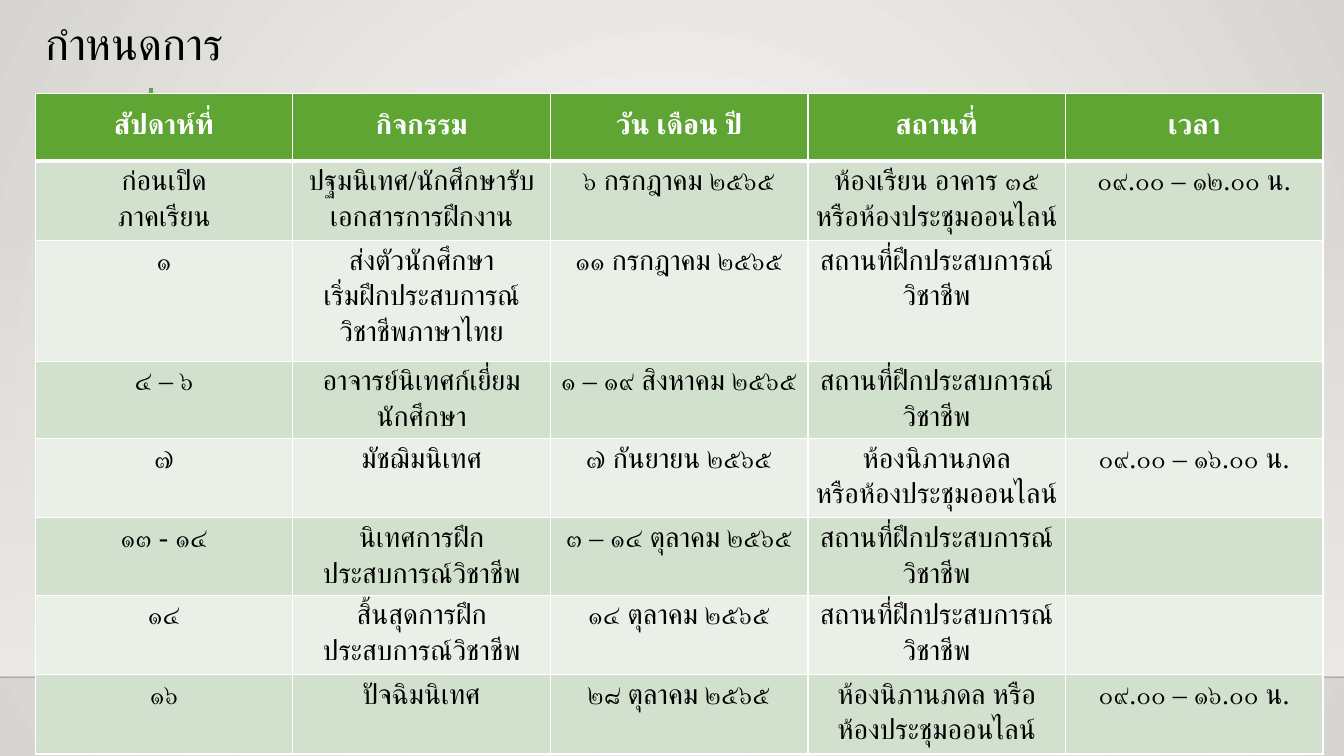
"""Build the internship schedule slide with a Thai timetable."""
from dataclasses import dataclass

import pptx
import pptx.dml.color
import pptx.enum.dml
import pptx.enum.lang
import pptx.enum.shapes
import pptx.enum.text
import pptx.oxml.ns
import pptx.util
from lxml import etree
from pptx.dml.color import RGBColor
from pptx.util import Cm

BLACK = RGBColor(0x00, 0x00, 0x00)
WHITE = RGBColor(0xFF, 0xFF, 0xFF)
GREEN = RGBColor(0x5F, 0xA5, 0x34)
LIGHT_GREEN = RGBColor(0xD2, 0xE1, 0xCE)
PALE_GREEN = RGBColor(0xEA, 0xF0, 0xE8)
BACKDROP_CENTER = RGBColor(0xFA, 0xFA, 0xF9)
BACKDROP_EDGE = RGBColor(0xD7, 0xD5, 0xD2)
WALL = RGBColor(0xED, 0xEB, 0xE7)
FLOOR_LINE = RGBColor(0x00, 0x00, 0x01)

SLIDE_WIDTH = Cm(33.87)
SLIDE_HEIGHT = Cm(19.05)
COLUMN_WIDTH = Cm(6.49)
SHORT, MEDIUM, TALL = Cm(1.7), Cm(2), Cm(3.04)
WORKPLACE = "สถานที่ฝึกประสบการณ์วิชาชีพ"
AFTERNOON_END = "๐๙.๐๐ – ๑๖.๐๐ น."


@dataclass(frozen=True)
class ScheduleRow:
    height: int
    texts: tuple[str, ...]


@dataclass(frozen=True)
class Rule:
    start: tuple[int, int]
    end: tuple[int, int]
    color: RGBColor
    width: float
    opacity: int = 100


SCHEDULE = (
    ScheduleRow(SHORT, ("สัปดาห์ที่", "กิจกรรม", "วัน เดือน ปี", "สถานที่", "เวลา")),
    ScheduleRow(MEDIUM, ("ก่อนเปิด\nภาคเรียน", "ปฐมนิเทศ/นักศึกษารับเอกสารการฝึกงาน",
                         "๖ กรกฎาคม ๒๕๖๕", "ห้องเรียน อาคาร ๓๕ หรือห้องประชุมออนไลน์",
                         "๐๙.๐๐ – ๑๒.๐๐ น.")),
    ScheduleRow(TALL, ("๑", "ส่งตัวนักศึกษา\nเริ่มฝึกประสบการณ์วิชาชีพภาษาไทย",
                       "๑๑ กรกฎาคม ๒๕๖๕", WORKPLACE, "")),
    ScheduleRow(SHORT, ("๔ – ๖", "อาจารย์นิเทศก์เยี่ยมนักศึกษา",
                        "๑ – ๑๙ สิงหาคม ๒๕๖๕", WORKPLACE, "")),
    ScheduleRow(MEDIUM, ("๗", "มัชฌิมนิเทศ", "๗ กันยายน ๒๕๖๕",
                         "ห้องนิภานภดล\nหรือห้องประชุมออนไลน์", AFTERNOON_END)),
    ScheduleRow(SHORT, ("๑๓ - ๑๔", "นิเทศการฝึกประสบการณ์วิชาชีพ",
                        "๓ – ๑๔ ตุลาคม ๒๕๖๕", WORKPLACE, "")),
    ScheduleRow(MEDIUM, ("๑๔", "สิ้นสุดการฝึกประสบการณ์วิชาชีพ",
                         "๑๔ ตุลาคม ๒๕๖๕", WORKPLACE, "")),
    ScheduleRow(MEDIUM, ("๑๖", "ปัจฉิมนิเทศ", "๒๘ ตุลาคม ๒๕๖๕",
                         "ห้องนิภานภดล หรือ\nห้องประชุมออนไลน์", AFTERNOON_END)),
)
RULES = (
    Rule((0, Cm(17.07)), (SLIDE_WIDTH, Cm(17.07)), FLOOR_LINE, 1, opacity=20),
    Rule((Cm(3.81), Cm(2.21)), (Cm(3.81), Cm(5.18)), GREEN, 3),
)


def add_element(parent: etree._Element, tag: str, **attributes: str) -> etree._Element:
    return etree.SubElement(parent, pptx.oxml.ns.qn(tag), **attributes)


def find_element(parent: etree._Element, tag: str) -> etree._Element:
    return next(parent.iter(pptx.oxml.ns.qn(tag)))


def set_opacity(color: etree._Element, percent: int) -> None:
    add_element(color, "a:alpha", val=str(percent * 1000))


def write_text(frame, text: str, *, font_name: str, size: float, color: RGBColor,
               line_spacing: float, bold: bool = False,
               alignment=pptx.enum.text.PP_ALIGN.LEFT) -> None:
    frame.word_wrap = True
    for index, line in enumerate(text.split("\n")):
        paragraph = frame.add_paragraph() if index else frame.paragraphs[0]
        paragraph.alignment = alignment
        paragraph.line_spacing = line_spacing
        run = paragraph.add_run()
        run.text = line
        run.font.name = font_name
        run.font.size = pptx.util.Pt(size)
        run.font.bold = bold
        run.font.color.rgb = color
        run.font.language_id = pptx.enum.lang.MSO_LANGUAGE_ID.THAI
        add_element(find_element(run._r, "a:rPr"), "a:cs", typeface=font_name)


def set_gradient(fill, first: RGBColor, last: RGBColor) -> None:
    fill.gradient()
    fill.gradient_angle = 270
    for stop, color in zip(fill.gradient_stops, (first, last)):
        stop.color.rgb = color


def draw_backdrop(slide) -> None:
    set_gradient(slide.background.fill, BACKDROP_CENTER, BACKDROP_EDGE)
    gradient = find_element(slide.element, "a:gradFill")
    gradient.remove(find_element(gradient, "a:lin"))
    radial = add_element(gradient, "a:path", path="circle")
    add_element(radial, "a:fillToRect", l="50000", t="50000", r="50000", b="50000")

    wall = slide.shapes.add_shape(pptx.enum.shapes.MSO_SHAPE.RECTANGLE,
                                  0, Cm(5.59), SLIDE_WIDTH, Cm(11.43))
    wall.shadow.inherit = False
    wall.line.fill.background()
    set_gradient(wall.fill, WALL, WALL)
    set_opacity(find_element(wall.element, "a:srgbClr"), 0)


def draw_rule(slide, rule: Rule) -> None:
    connector = slide.shapes.add_connector(pptx.enum.shapes.MSO_CONNECTOR.STRAIGHT,
                                           *rule.start, *rule.end)
    connector.line.color.rgb = rule.color
    connector.line.width = pptx.util.Pt(rule.width)
    if rule.opacity < 100:
        set_opacity(find_element(connector.element, "a:srgbClr"), rule.opacity)
    add_element(connector.element.spPr, "a:effectLst")


def draw_title(slide) -> None:
    box = slide.shapes.add_textbox(Cm(0.89), Cm(0.25), Cm(26.44), Cm(1.65))
    box.text_frame.vertical_anchor = pptx.enum.text.MSO_ANCHOR.BOTTOM
    write_text(box.text_frame, "กำหนดการ", font_name="Vollkorn", size=32,
               color=BLACK, line_spacing=0.9)


def set_borders(cell, top: float, bottom: float) -> None:
    properties = cell._tc.get_or_add_tcPr()
    widths = {"a:lnL": 1, "a:lnR": 1, "a:lnT": top, "a:lnB": bottom}
    for position, (tag, width) in enumerate(widths.items()):
        border = add_element(properties, tag, w=str(pptx.util.Pt(width)))
        add_element(add_element(border, "a:solidFill"), "a:srgbClr", val=str(WHITE))
        properties.insert(position, border)


def draw_schedule(slide) -> None:
    column_count = len(SCHEDULE[0].texts)
    table = slide.shapes.add_table(
        len(SCHEDULE), column_count, Cm(0.89), Cm(2.36), COLUMN_WIDTH * column_count,
        sum(row.height for row in SCHEDULE)).table
    for column in table.columns:
        column.width = COLUMN_WIDTH
    for row_index, row in enumerate(SCHEDULE):
        table.rows[row_index].height = row.height
        header = row_index == 0
        band = LIGHT_GREEN if row_index % 2 else PALE_GREEN
        for column_index, text in enumerate(row.texts):
            cell = table.cell(row_index, column_index)
            cell.margin_left = cell.margin_right = Cm(0.18)
            cell.margin_top = cell.margin_bottom = 0
            cell.fill.solid()
            cell.fill.fore_color.rgb = GREEN if header else band
            set_borders(cell, top=3 if row_index == 1 else 1, bottom=3 if header else 1)
            if text:
                write_text(cell.text_frame, text, font_name="Times New Roman", size=20,
                           color=WHITE if header else BLACK, bold=header,
                           line_spacing=1.5 if header else 1.15,
                           alignment=pptx.enum.text.PP_ALIGN.CENTER)


def main() -> None:
    presentation = pptx.Presentation()
    presentation.slide_width = SLIDE_WIDTH
    presentation.slide_height = SLIDE_HEIGHT
    slide = presentation.slides.add_slide(presentation.slide_layouts[6])
    draw_backdrop(slide)
    for rule in RULES:
        draw_rule(slide, rule)
    draw_title(slide)
    draw_schedule(slide)
    presentation.save("out.pptx")


if __name__ == "__main__":
    main()
